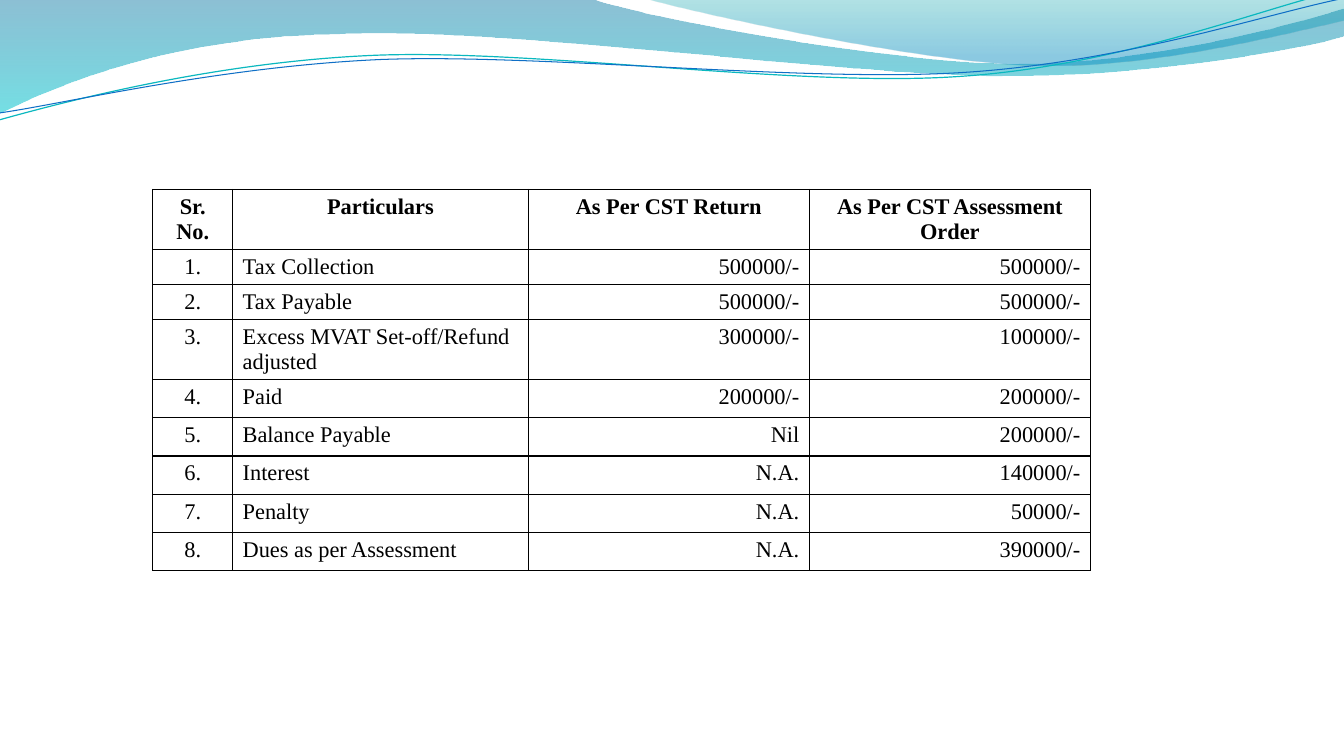
import dataclasses

import pptx
import pptx.dml.color
import pptx.enum.text
import pptx.oxml
import pptx.oxml.ns
import pptx.util

Pt = pptx.util.Pt
ALIGN = pptx.enum.text.PP_ALIGN


@dataclasses.dataclass(frozen=True)
class Theme:
    font: str = "Times New Roman"
    text_size: float = 16
    border_width: float = 1
    text: str = "000000"
    paper: str = "FFFFFF"
    # Gradient stops: position, colour, opacity in percent
    band: tuple = ((0, "0074A1", 45), (1, "00C6CF", 55))
    fan: tuple = ((0, "00A1A9", 30), (0.8, "008BBF", 45))
    # Wave lines: colour, width
    teal_line: tuple = ("0AB8BF", 0.85)
    blue_line: tuple = ("0F6FC6", 0.75)


THEME = Theme()

# Paths in points: a pair is a straight step, six numbers are a Bézier step
BAND = [(-0.4, 0), (422.6, -0.7),
        (456.5, 12.2, 637.2, 45.7, 727.9, 45.7),
        (819.4, 45.7, 920.2, 18.7, 959.8, 6.5), (961.2, 25.9),
        (943.9, 31.7, 835.2, 54.7, 715.7, 54.4),
        (596.9, 54.1, 366.5, 20.2, 247, 24.5),
        (123.8, 25.9, 43.9, 59.8, -0.7, 81.4)]
FAN = [(460.1, -0.7),
       (488.9, 7.9, 654.5, 44.6, 738, 46.8),
       (821.5, 49.7, 923, 23, 959.8, 15.1), (959.8, 0)]
TEAL_WAVE = [(-0.7, 85.7),
             (46.1, 72.7, 151.9, 44.6, 265.7, 39.6),
             (379.4, 34.6, 568.8, 62.6, 684, 54.7),
             (799.2, 47.5, 901.4, 5.8, 958.3, -7.2)]
BLUE_WAVE = [(0, 80.6),
             (45.4, 74.2, 157, 47.5, 272.2, 42.5),
             (386.6, 38.2, 573.1, 59, 687.6, 51.8),
             (802.8, 44.6, 903.6, 10.1, 960.5, -1.4)]

COLUMN_WIDTHS = [57, 211.2, 200.8, 200.8]
ROW_HEIGHTS = [42.8, 25, 25, 42.8] + [27.36] * 5
COLUMN_ALIGNMENTS = [ALIGN.CENTER, ALIGN.LEFT, ALIGN.RIGHT, ALIGN.RIGHT]
HEADINGS = ["Sr. No.", "Particulars", "As Per CST Return", "As Per CST Assessment Order"]
ENTRIES = [
    ("Tax Collection", "500000/-", "500000/-"),
    ("Tax Payable", "500000/-", "500000/-"),
    ("Excess MVAT Set-off/Refund adjusted", "300000/-", "100000/-"),
    ("Paid", "200000/-", "200000/-"),
    ("Balance Payable", "Nil", "200000/-"),
    ("Interest", "N.A.", "140000/-"),
    ("Penalty", "N.A.", "50000/-"),
    ("Dues as per Assessment", "N.A.", "390000/-"),
]


def rgb(value):
    return pptx.dml.color.RGBColor.from_string(value)


def set_attributes(target, values):
    for name, value in values.items():
        setattr(target, name, value)


def add_outline(slide, left, top, steps, close):
    """Draw the nodes as a polygon, then join each Bézier step into one curve."""
    nodes = [(Pt(left + step[index]), Pt(top + step[index + 1]))
             for step in steps for index in range(0, len(step), 2)]
    builder = slide.shapes.build_freeform(*nodes[0], scale=1.0)
    builder.add_line_segments(nodes[1:], close=close)
    shape = builder.convert_to_shape()
    shape.shadow.inherit = False
    segments = iter(list(shape._element.iter(pptx.oxml.ns.qn("a:lnTo"))))
    for step in steps[1:]:
        parts = [next(segments) for _ in range(len(step) // 2)]
        if len(parts) == 3:
            curve = pptx.oxml.parse_xml(f'<a:cubicBezTo {pptx.oxml.ns.nsdecls("a")}/>')
            parts[0].addprevious(curve)
            for part in parts:
                curve.append(part[0])
                part.getparent().remove(part)
    return shape


def add_waves(slide, left, top):
    # Translucent areas
    for steps, stops in ((BAND, THEME.band), (FAN, THEME.fan)):
        shape = add_outline(slide, left, top, steps, True)
        shape.line.fill.background()
        shape.fill.gradient()
        shape.fill.gradient_angle = 270
        for stop, (position, color, opacity) in zip(shape.fill.gradient_stops, stops):
            stop.position = position
            stop.color.rgb = rgb(color)
        colors = shape.fill._xPr.iter(pptx.oxml.ns.qn("a:srgbClr"))
        for color_element, (position, color, opacity) in zip(colors, stops):
            color_element.append(pptx.oxml.parse_xml(
                f'<a:alpha {pptx.oxml.ns.nsdecls("a")} val="{opacity * 1000}"/>'))
    # Thin lines
    for steps, (color, width) in ((TEAL_WAVE, THEME.teal_line), (BLUE_WAVE, THEME.blue_line)):
        shape = add_outline(slide, left, top, steps, False)
        shape.fill.background()
        shape.line.color.rgb = rgb(color)
        shape.line.width = Pt(width)


def add_borders(cell):
    properties = cell._tc.get_or_add_tcPr()
    for index, side in enumerate("LRTB"):
        properties.insert(index, pptx.oxml.parse_xml(
            f'<a:ln{side} {pptx.oxml.ns.nsdecls("a")} w="{Pt(THEME.border_width)}">'
            f'<a:solidFill><a:srgbClr val="{THEME.text}"/></a:solidFill></a:ln{side}>'))


def add_tax_table(slide, left, top):
    rows = [HEADINGS] + [(f"{number}.", *entry) for number, entry in enumerate(ENTRIES, 1)]
    table = slide.shapes.add_table(
        len(rows), len(HEADINGS), Pt(left), Pt(top),
        Pt(sum(COLUMN_WIDTHS)), Pt(sum(ROW_HEIGHTS))).table
    set_attributes(table, {"first_row": False, "horz_banding": False})
    for column, width in zip(table.columns, COLUMN_WIDTHS):
        column.width = Pt(width)
    for row, height in zip(table.rows, ROW_HEIGHTS):
        row.height = Pt(height)
    for row_index, texts in enumerate(rows):
        is_heading = row_index == 0
        for column_index, text in enumerate(texts):
            cell = table.cell(row_index, column_index)
            cell.text = text
            cell.fill.solid()
            cell.fill.fore_color.rgb = rgb(THEME.paper)
            add_borders(cell)
            paragraph = cell.text_frame.paragraphs[0]
            paragraph.alignment = ALIGN.CENTER if is_heading else COLUMN_ALIGNMENTS[column_index]
            font = paragraph.runs[0].font
            set_attributes(font, {"name": THEME.font, "size": Pt(THEME.text_size),
                                  "bold": is_heading})
            font.color.rgb = rgb(THEME.text)


def main():
    presentation = pptx.Presentation()
    set_attributes(presentation, {"slide_width": Pt(960), "slide_height": Pt(540)})
    slide = presentation.slides.add_slide(presentation.slide_layouts.get_by_name("Blank"))
    add_waves(slide, 0, 0)
    add_tax_table(slide, 109.2, 135.4)
    presentation.save("out.pptx")


if __name__ == "__main__":
    main()
